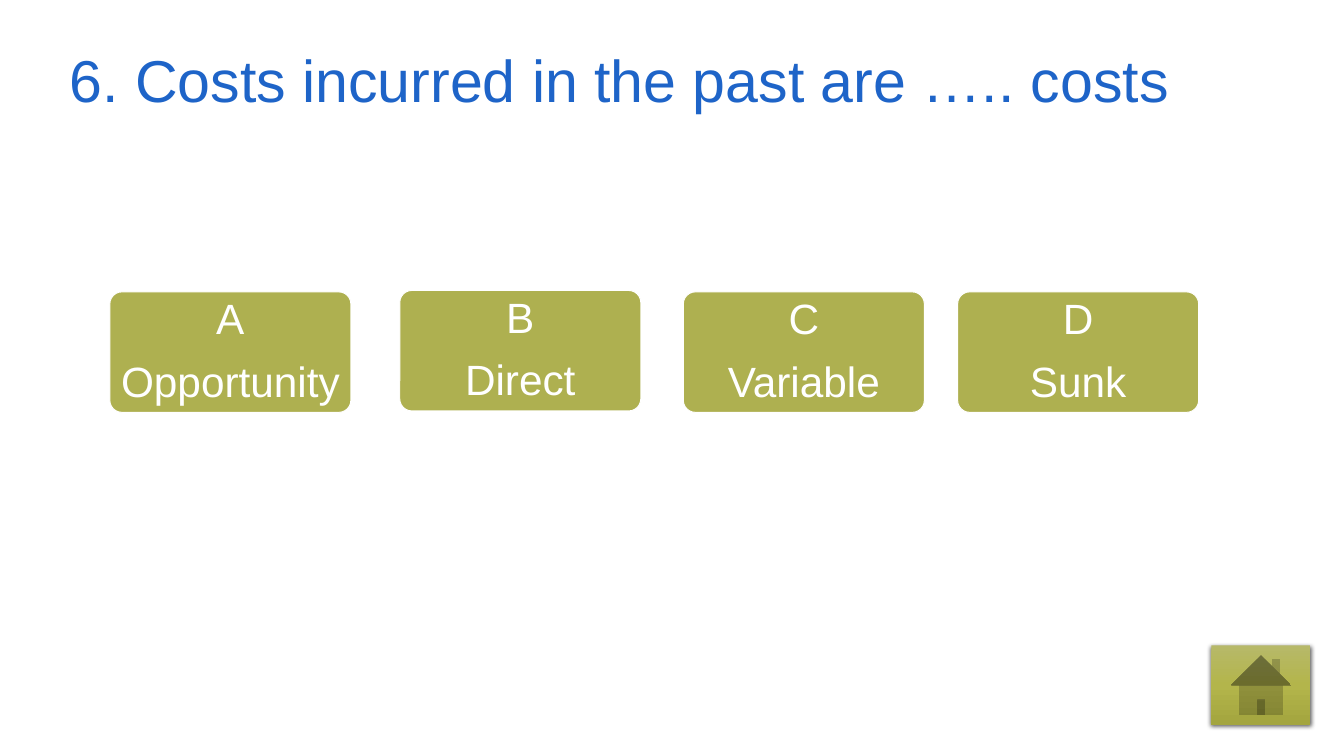
"""Build a quiz slide with one question, four answer tiles and a home button."""
from dataclasses import dataclass

from lxml.etree import SubElement
from pptx import Presentation
from pptx.dml.color import RGBColor as RGB
from pptx.enum.shapes import MSO_SHAPE as Shape
from pptx.enum.text import MSO_ANCHOR as Anchor, PP_ALIGN as Align
from pptx.oxml import parse_xml
from pptx.oxml.ns import nsdecls, qn
from pptx.util import Inches, Pt


@dataclass(frozen=True)
class Theme:
    font: str = "Arial"
    question: RGB = RGB(0x1E, 0x64, 0xC8)
    tile: RGB = RGB(0xAE, 0xB0, 0x50)
    white: RGB = RGB(0xFF, 0xFF, 0xFF)
    button_stops: tuple = ((0, "B7B969"), (50, "B3B54B"), (100, "A3A53E"))
    shadow: str = "000000"
    question_size: int = 60
    answer_size: int = 43


THEME = Theme()
ANSWERS = (
    ("A", "Opportunity", 1.55, 4.12),
    ("B", "Direct", 5.64, 4.1),
    ("C", "Variable", 9.64, 4.12),
    ("D", "Sunk", 13.51, 4.12),
)


def set_insets(frame, side, top):
    frame.margin_left = frame.margin_right = Inches(side)
    frame.margin_top = frame.margin_bottom = Inches(top)


def style_paragraph(paragraph, size, color, align):
    paragraph.alignment = align
    paragraph.line_spacing = 0.9
    for run in paragraph.runs:
        run.font.name = THEME.font
        run.font.size = Pt(size)
        run.font.color.rgb = color


def add_question(slide, text):
    question = slide.shapes.add_textbox(
        Inches(0.89), Inches(0.62), Inches(17.59), Inches(1.63))
    frame = question.text_frame
    frame.word_wrap = True
    frame.vertical_anchor = Anchor.TOP
    set_insets(frame, 0.09, 0.1)
    frame.text = text
    style_paragraph(frame.paragraphs[0], THEME.question_size,
                    THEME.question, Align.LEFT)


def add_answer(slide, letter, answer, left, top):
    tile = slide.shapes.add_shape(
        Shape.ROUNDED_RECTANGLE, Inches(left), Inches(top), Inches(3.4), Inches(1.7))
    tile.adjustments[0] = 0.1
    tile.shadow.inherit = False
    tile.fill.solid()
    tile.fill.fore_color.rgb = THEME.tile
    tile.line.color.rgb = THEME.white
    tile.line.width = Pt(1)
    frame = tile.text_frame
    frame.word_wrap = False
    frame.vertical_anchor = Anchor.MIDDLE
    set_insets(frame, 0.09, 0.06)
    frame.text = f"{letter}\n{answer}"
    for paragraph in frame.paragraphs:
        style_paragraph(paragraph, THEME.answer_size, THEME.white, Align.CENTER)
        paragraph.space_after = Pt(17)


def add_home_button(slide):
    button = slide.shapes.add_shape(
        Shape.ACTION_BUTTON_HOME, Inches(17.09), Inches(9.11), Inches(1.4), Inches(1.12))
    button.line.fill.background()
    button.shadow.inherit = False
    properties = button.element.spPr
    stops = "".join(
        f'<a:gs pos="{position * 1000}"><a:srgbClr val="{color}"/></a:gs>'
        for position, color in THEME.button_stops)
    gradient = parse_xml(
        f'<a:gradFill {nsdecls("a")} rotWithShape="1"><a:gsLst>{stops}</a:gsLst>'
        '<a:lin ang="5400000" scaled="0"/></a:gradFill>')
    properties.find(qn("a:prstGeom")).addnext(gradient)
    shadow = SubElement(
        properties.find(qn("a:effectLst")), qn("a:outerShdw"),
        blurRad=str(Pt(4.5)), dist=str(Pt(1.5)), dir="5400000",
        algn="ctr", rotWithShape="0")
    color = SubElement(shadow, qn("a:srgbClr"), val=THEME.shadow)
    SubElement(color, qn("a:alpha"), val="63000")


def main():
    deck = Presentation()
    deck.slide_width, deck.slide_height = Inches(18.96), Inches(10.67)
    slide = deck.slides.add_slide(deck.slide_layouts[6])
    add_question(slide, "6. Costs incurred in the past are ….. costs")
    add_home_button(slide)
    for answer in ANSWERS:
        add_answer(slide, *answer)
    deck.save("out.pptx")


if __name__ == "__main__":
    main()
